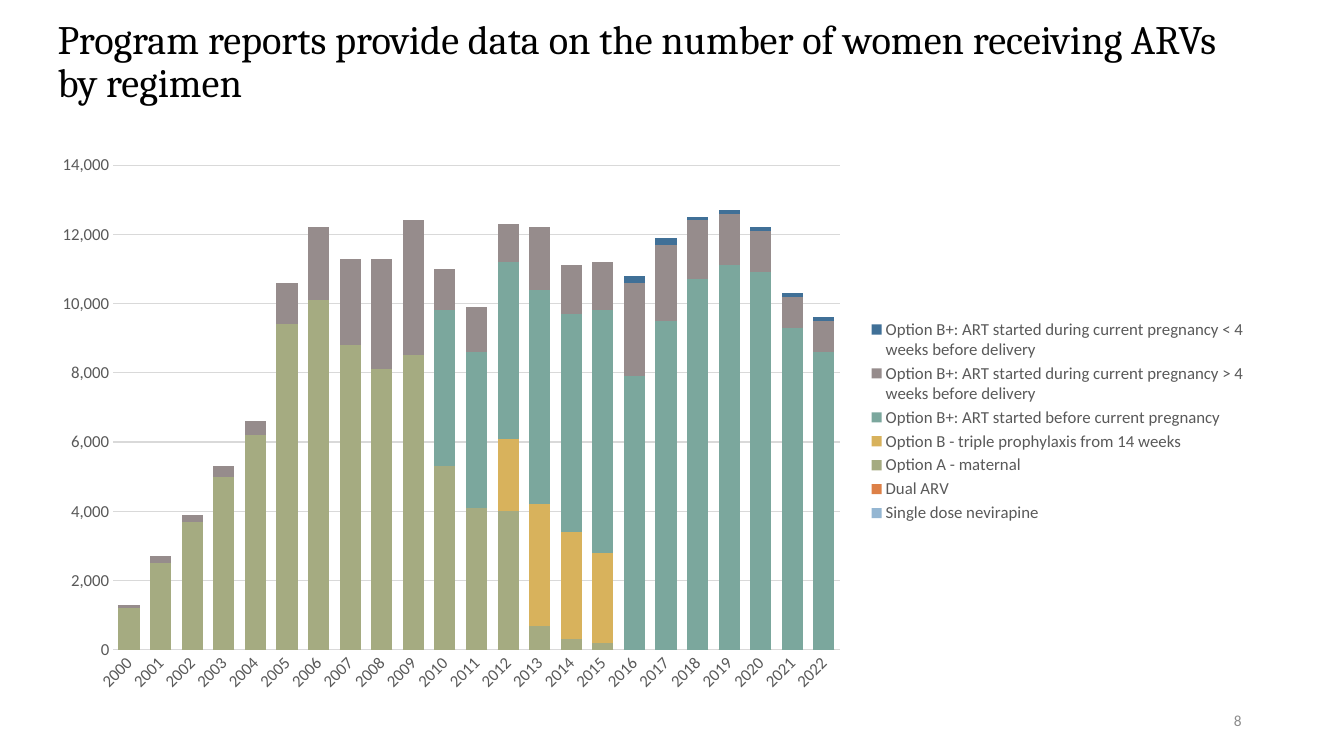
from lxml.etree import SubElement
from pptx import Presentation
from pptx.chart.data import CategoryChartData
from pptx.dml.color import RGBColor
from pptx.enum.chart import XL_CHART_TYPE, XL_LEGEND_POSITION, XL_TICK_MARK
from pptx.enum.text import MSO_ANCHOR, PP_ALIGN
from pptx.oxml import parse_xml
from pptx.oxml.ns import nsdecls, qn
from pptx.util import Pt

THEME = {
    "heading_font": "Cambria", "body_font": "Calibri",
    "title_size": 28.8, "chart_size": 12, "number_size": 11,
    "title": "000000", "label": "595959", "grid": "D9D9D9", "number": "8C8C8C",
    "nevirapine": "94B6D2", "dual": "DD8047", "option_a": "A5AB81",
    "option_b": "D8B25C", "before": "7BA79D", "early": "968C8C", "late": "407097",
}

YEARS = range(2000, 2023)
REGIMENS = [
    ("Single dose nevirapine", "nevirapine", [0] * 23),
    ("Dual ARV", "dual", [0] * 23),
    ("Option A - maternal", "option_a",
     [1200, 2500, 3700, 5000, 6200, 9400, 10100, 8800, 8100, 8500, 5300, 4100,
      4000, 700, 300, 200] + [0] * 7),
    ("Option B - triple prophylaxis from 14 weeks", "option_b",
     [0] * 12 + [2100, 3500, 3100, 2600] + [0] * 7),
    ("Option B+: ART started before current pregnancy", "before",
     [0] * 10 + [4500, 4500, 5100, 6200, 6300, 7000, 7900, 9500, 10700, 11100,
                 10900, 9300, 8600]),
    ("Option B+: ART started during current pregnancy > 4 weeks before delivery", "early",
     [100, 200, 200, 300, 400, 1200, 2100, 2500, 3200, 3900, 1200, 1300, 1100,
      1800, 1400, 1400, 2700, 2200, 1700, 1500, 1200, 900, 900]),
    ("Option B+: ART started during current pregnancy < 4 weeks before delivery", "late",
     [0] * 16 + [200, 200, 100, 100, 100, 100, 100]),
]


def add_text(slide, text, left, top, width, height, font_name, size, color, alignment):
    shape = slide.shapes.add_textbox(Pt(left), Pt(top), Pt(width), Pt(height))
    text_frame = shape.text_frame
    text_frame.word_wrap = True
    text_frame.vertical_anchor = MSO_ANCHOR.MIDDLE
    text_frame.text = text
    paragraph = text_frame.paragraphs[0]
    paragraph.alignment = alignment
    font = paragraph.runs[0].font
    font.name = font_name
    font.size = Pt(size)
    font.color.rgb = RGBColor.from_string(color)
    return paragraph


def place_in_chart(element, index, settings):
    for old_layout in element.findall(qn("c:layout")):
        element.remove(old_layout)
    layout = parse_xml(f"<c:layout {nsdecls('c')}><c:manualLayout/></c:layout>")
    for name, value in settings.items():
        SubElement(layout[0], qn(f"c:{name}")).set("val", str(value))
    element.insert(index, layout)


presentation = Presentation()
presentation.slide_width = Pt(960)
presentation.slide_height = Pt(540)
slide = presentation.slides.add_slide(presentation.slide_layouts[6])

title = add_text(
    slide, "Program reports provide data on the number of women receiving ARVs by regimen",
    34, 17, 857, 56, THEME["heading_font"], THEME["title_size"], THEME["title"], PP_ALIGN.LEFT)
title.line_spacing = 0.9

chart_data = CategoryChartData(number_format="#,##0")
chart_data.categories = [str(year) for year in YEARS]
for name, color, women in REGIMENS:
    chart_data.add_series(name, women)
chart = slide.shapes.add_chart(
    XL_CHART_TYPE.COLUMN_STACKED, Pt(29), Pt(102), Pt(865), Pt(398), chart_data).chart
chart.has_title = False
chart.font.name = THEME["body_font"]
chart.font.size = Pt(THEME["chart_size"])
chart.font.color.rgb = RGBColor.from_string(THEME["label"])

plot = chart.plots[0]
plot.gap_width = 50
plot.overlap = 100
plot.vary_by_categories = False
for series, (name, color, women) in zip(plot.series, REGIMENS):
    series.format.fill.solid()
    series.format.fill.fore_color.rgb = RGBColor.from_string(THEME[color])

year_axis = chart.category_axis
women_axis = chart.value_axis
for axis in (year_axis, women_axis):
    axis.major_tick_mark = XL_TICK_MARK.NONE
    axis.minor_tick_mark = XL_TICK_MARK.NONE
women_axis.minimum_scale = 0
women_axis.maximum_scale = 14000
women_axis.major_unit = 2000
women_axis.has_major_gridlines = True
women_axis.tick_labels.number_format = "#,##0"
women_axis.tick_labels.number_format_is_linked = False
women_axis.format.line.fill.background()
for line in (year_axis.format.line, women_axis.major_gridlines.format.line):
    line.color.rgb = RGBColor.from_string(THEME["grid"])
    line.width = Pt(0.75)

year_axis.tick_labels.font.size = Pt(THEME["chart_size"])
year_axis._element.find(qn("c:txPr")).find(qn("a:bodyPr")).set("rot", "-2700000")

chart.has_legend = True
legend = chart.legend
legend.position = XL_LEGEND_POSITION.RIGHT
legend.include_in_layout = False
legend.font.name = THEME["body_font"]
legend.font.size = Pt(THEME["chart_size"])
legend.font.color.rgb = RGBColor.from_string(THEME["label"])

page_position = {"xMode": "edge", "yMode": "edge"}
plot_area = chart._chartSpace.find(qn("c:chart")).find(qn("c:plotArea"))
place_in_chart(plot_area, 0, {
    "layoutTarget": "inner", **page_position, "x": 0.06, "y": 0.04, "w": 0.6, "h": 0.87})
place_in_chart(legend._element, 1, {
    **page_position, "x": 0.68, "y": 0.31, "w": 0.32, "h": 0.38})

add_text(slide, "8", 678, 500, 216, 29, THEME["body_font"], THEME["number_size"],
         THEME["number"], PP_ALIGN.RIGHT)

presentation.save("out.pptx")
